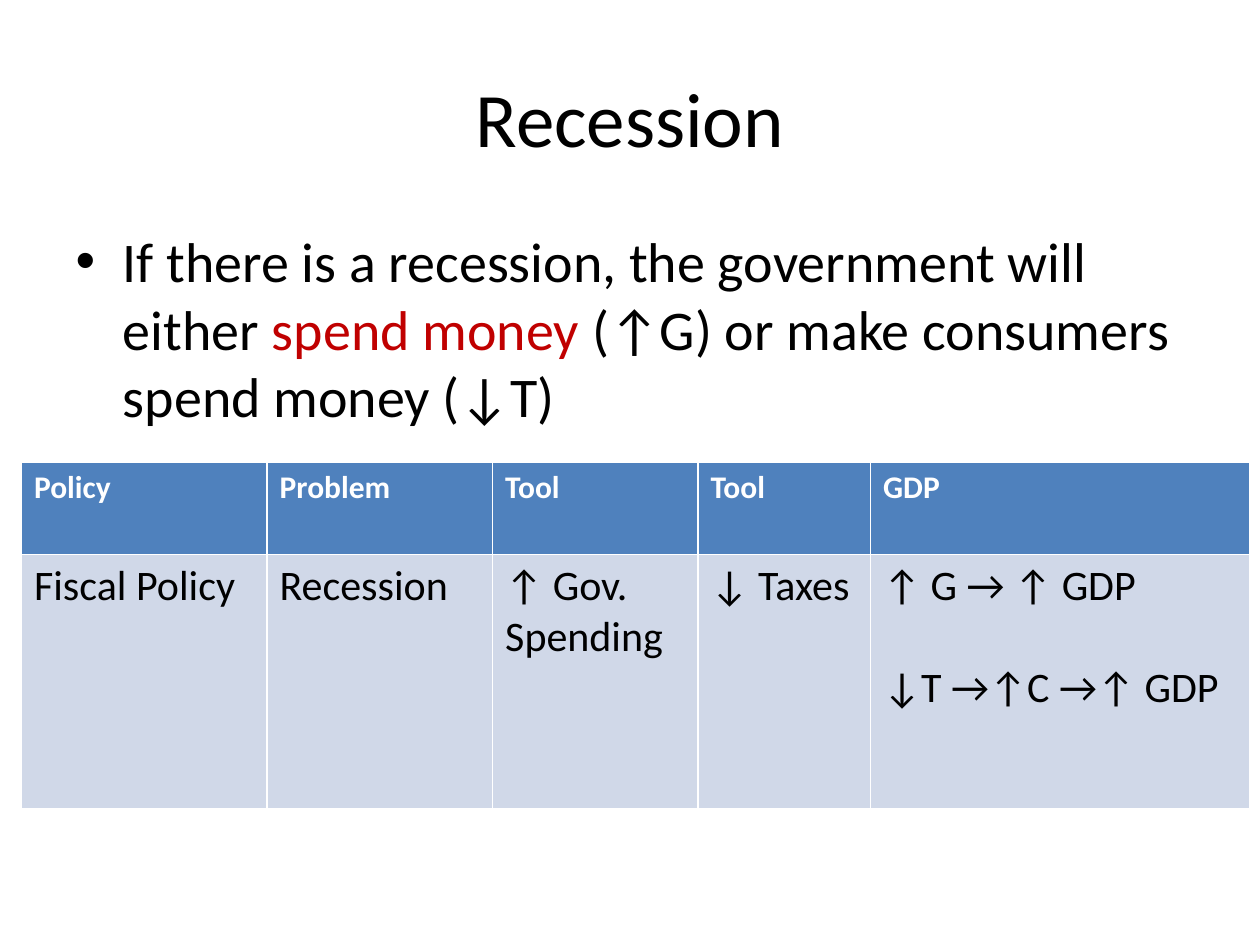
from pptx import Presentation
from pptx.dml.color import RGBColor
from pptx.enum.text import MSO_AUTO_SIZE, PP_ALIGN
from pptx.util import Inches, Pt

BLACK = RGBColor(0x00, 0x00, 0x00)
WHITE = RGBColor(0xFF, 0xFF, 0xFF)
RED = RGBColor(0xC0, 0x00, 0x00)
HEADER_BLUE = RGBColor(0x4F, 0x81, 0xBD)
ROW_BLUE = RGBColor(0xD0, 0xD8, 0xE8)

CENTER = PP_ALIGN.CENTER
NO_AUTOFIT = MSO_AUTO_SIZE.NONE
TITLE_AND_CONTENT = 1

TITLE_FORMAT = {"name": "Calibri", "size": Pt(44)}
BODY_FORMAT = {"name": "Calibri", "size": Pt(32)}
HEADER_FORMAT = {"name": "Calibri", "size": Pt(18), "bold": True}
CELL_FORMAT = {"name": "Calibri", "size": Pt(24), "bold": False}

BODY_RUNS = [
    ("If there is a recession, the government will either ", BLACK),
    ("spend money ", RED),
    ("(↑G) or make consumers spend money (↓T)", BLACK),
]

COLUMN_WIDTHS = [1.95, 1.79, 1.63, 1.37, 3.01]
ROW_HEIGHTS = [0.73, 2.02]
# Each cell is a list of paragraphs.
TABLE_ROWS = [
    [["Policy"], ["Problem"], ["Tool"], ["Tool"], ["GDP"]],
    [["Fiscal Policy"], ["Recession"], ["↑ Gov. Spending"], ["↓ Taxes"],
     ["↑ G → ↑ GDP", "↓T →↑C →↑ GDP"]],
]
ROW_STYLES = [
    (HEADER_BLUE, WHITE, HEADER_FORMAT),
    (ROW_BLUE, BLACK, CELL_FORMAT),
]
PARAGRAPH_GAP = Pt(29)


def add_run(paragraph, text, color, font_format):
    run = paragraph.add_run()
    run.text = text
    run.font.color.rgb = color
    for name, value in font_format.items():
        setattr(run.font, name, value)


def place(shape, left, top, width, height):
    box = {"left": left, "top": top, "width": width, "height": height}
    for name, value in box.items():
        setattr(shape, name, Inches(value))


def fill_placeholder(placeholder, box, runs, font_format):
    place(placeholder, *box)
    placeholder.text_frame.auto_size = NO_AUTOFIT
    paragraph = placeholder.text_frame.paragraphs[0]
    for text, color in runs:
        add_run(paragraph, text, color, font_format)
    return paragraph


def fill_cell(cell, texts, fill_color, text_color, font_format):
    cell.fill.solid()
    cell.fill.fore_color.rgb = fill_color
    frame = cell.text_frame
    for index, text in enumerate(texts):
        paragraph = frame.add_paragraph() if index else frame.paragraphs[0]
        if index:
            paragraph.space_before = PARAGRAPH_GAP
        add_run(paragraph, text, text_color, font_format)


def add_policy_table(slide):
    table = slide.shapes.add_table(
        len(ROW_HEIGHTS), len(COLUMN_WIDTHS), Inches(0.17), Inches(3.67),
        Inches(sum(COLUMN_WIDTHS)), Inches(sum(ROW_HEIGHTS))).table
    for column, width in zip(table.columns, COLUMN_WIDTHS):
        column.width = Inches(width)
    for row, height, cells, style in zip(
            table.rows, ROW_HEIGHTS, TABLE_ROWS, ROW_STYLES):
        row.height = Inches(height)
        for cell, texts in zip(row.cells, cells):
            fill_cell(cell, texts, *style)


def main():
    presentation = Presentation()
    presentation.slide_width = Inches(10)
    presentation.slide_height = Inches(7.5)
    layout = presentation.slide_layouts[TITLE_AND_CONTENT]
    slide = presentation.slides.add_slide(layout)

    title = fill_placeholder(slide.shapes.title, (0.5, 0.3, 9, 1.25),
                             [("Recession", BLACK)], TITLE_FORMAT)
    title.alignment = CENTER
    fill_placeholder(slide.placeholders[1], (0.5, 1.75, 9, 1.92),
                     BODY_RUNS, BODY_FORMAT)
    add_policy_table(slide)

    presentation.save("out.pptx")


if __name__ == "__main__":
    main()
